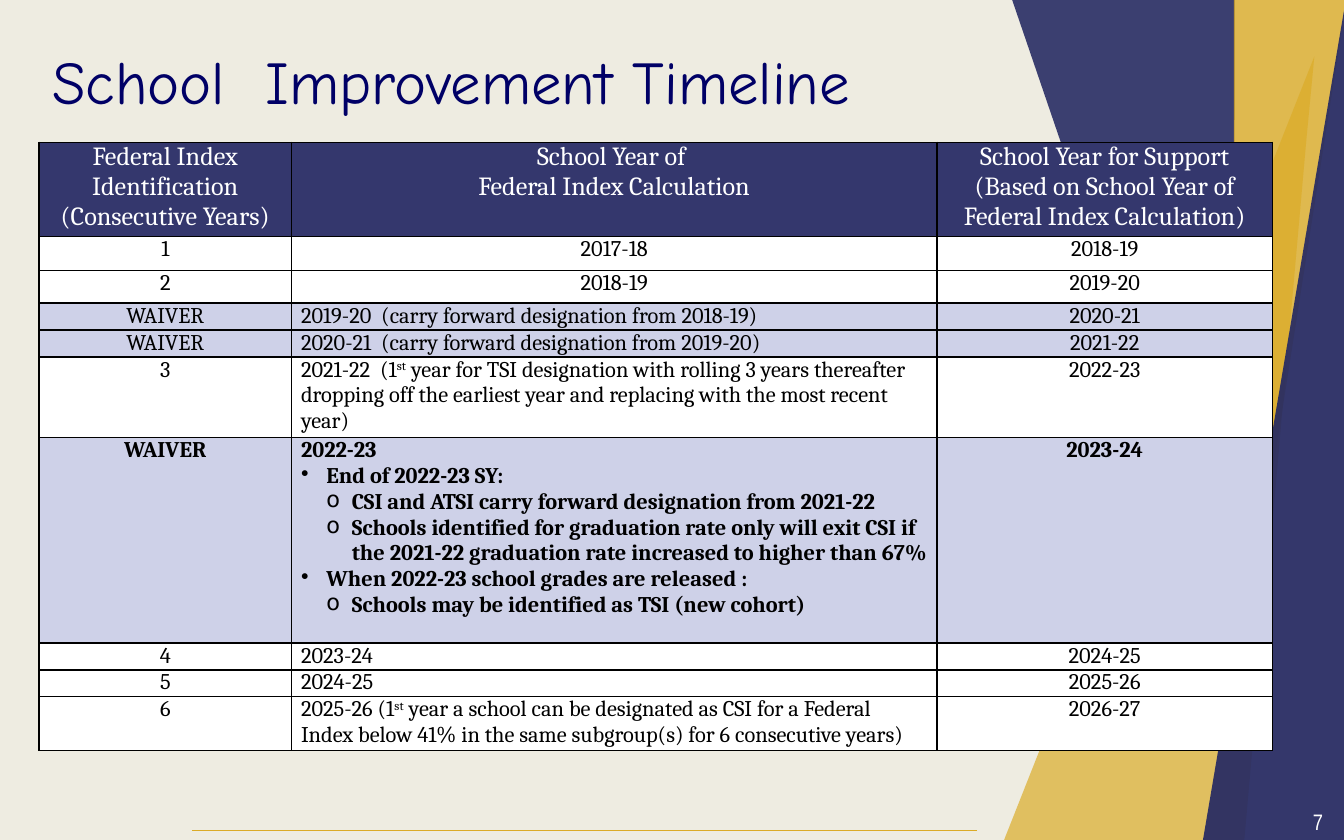
from lxml import etree
from pptx import Presentation
from pptx import util as u
from pptx.dml.color import RGBColor
from pptx.enum import shapes, text
from pptx.oxml import ns

COLORS = {
    "paper": "EEECE1", "navy": "262A63", "gold": "DBAB27", "header": "34376D",
    "waiver": "CED1E8", "white": "FFFFFF", "black": "000000", "title": "000066",
}
CENTER = text.PP_ALIGN.CENTER

# Corner points in centimetres, colour, opacity in percent
DECORATIONS = [
    ([(19.13, 0), (23.32, 12.27), (23.34, 0)], "navy", 89),
    ([(23.32, 0), (23.32, 13.61), (25.45, 0)], "gold", 78),
    ([(18.87, 16.15), (24.84, 1.07), (24.69, 2.64), (23.5, 16.08)], "gold", 69),
    ([(22.71, 16.03), (25.43, 0.03), (25.43, 16.03)], "navy", 93),
]

COLUMN_WIDTHS = [4.77, 12.2, 6.34]
HEADERS = [
    "Federal Index Identification (Consecutive Years)",
    ["School Year of ", "Federal Index Calculation"],
    "School Year for Support (Based on School Year of Federal Index Calculation)",
]
HEADER_HEIGHT = 1.71
# A paragraph is a string, a (level, string) bullet, or a list of runs;
# a run starting with ^ is superscript.
WAIVER_DETAILS = [
    "2022-23",
    (1, "End of 2022-23 SY:"),
    (2, "CSI and ATSI carry forward designation from 2021-22"),
    (2, "Schools identified for graduation rate only will exit CSI if the "
        "2021-22 graduation rate increased to higher than 67%"),
    (1, "When 2022-23 school grades are released :"),
    (2, "Schools may be identified as TSI (new cohort)"),
]
TIMELINE = [  # identification, calculation year, support year, row height
    ("1", "2017-18", "2018-19", 0.64),
    ("2", "2018-19", "2019-20", 0.62),
    ("WAIVER", "2019-20  (carry forward designation from 2018-19)", "2020-21", 0.48),
    ("WAIVER", "2020-21  (carry forward designation from 2019-20)", "2021-22", 0.48),
    ("3", [["2021-22  (1", "^st", " year for TSI designation with rolling 3 years "
            "thereafter dropping off the earliest year and replacing with the "
            "most recent year)"]], "2022-23", 1.46),
    ("WAIVER", WAIVER_DETAILS, "2023-24", 3.88),
    ("4", "2023-24", "2024-25", 0.48),
    ("5", "2024-25", "2025-26", 0.48),
    ("6", [["2025-26 (1", "^st", " year a school can be designated as CSI for a "
            "Federal Index below 41% in the same subgroup(s) for 6 consecutive "
            "years)"]], "2026-27", 0.97),
]


def rgb(color):
    return RGBColor.from_string(COLORS[color])


def add_xml(parent, tag, **attributes):
    child = etree.SubElement(parent, ns.qn(tag))
    for key, value in attributes.items():
        child.set(key, str(value))
    return child


def add_decoration(slide, points, color, opacity):
    corners = [(u.Cm(x), u.Cm(y)) for x, y in points]
    builder = slide.shapes.build_freeform(*corners[0])
    builder.add_line_segments(corners[1:], close=True)
    panel = builder.convert_to_shape()
    panel.shadow.inherit = False
    panel.line.fill.background()
    panel.fill.solid()
    panel.fill.fore_color.rgb = rgb(color)
    tint = panel.fill._xPr.find(".//" + ns.qn("a:srgbClr"))
    add_xml(tint, "a:alpha", val=opacity * 1000)


def add_footer_rule(slide):
    y = u.Cm(15.7)
    rule = slide.shapes.add_connector(
        shapes.MSO_CONNECTOR.STRAIGHT, u.Cm(3.63), y, u.Cm(18.47), y)
    rule.line.color.rgb = rgb("gold")
    rule.line.width = u.Pt(0.75)
    add_xml(rule._element.spPr, "a:effectLst")


def add_run(paragraph, words, font, size, color, bold=False):
    run = paragraph.add_run()
    run.text = words.removeprefix("^")
    run.font.name, run.font.size, run.font.bold = font, u.Pt(size), bold
    run.font.color.rgb = rgb(color)
    if words.startswith("^"):
        run.font._element.set("baseline", "30000")


def add_label(slide, box, words, font, size, color, inset):
    label = slide.shapes.add_textbox(*(u.Cm(side) for side in box))
    frame = label.text_frame
    frame.word_wrap = True
    frame.vertical_anchor = text.MSO_ANCHOR.MIDDLE
    frame.margin_top = frame.margin_bottom = u.Cm(inset)
    paragraph = frame.paragraphs[0]
    add_run(paragraph, words, font, size, color)
    return paragraph


def set_bullet(paragraph, level):
    properties = paragraph._p.get_or_add_pPr()
    properties.set("marL", str(u.Cm(0.48 * level)))
    properties.set("indent", str(u.Cm(-0.48)))
    tint = add_xml(properties, "a:buClr")
    add_xml(tint, "a:srgbClr", val=COLORS["black"])
    add_xml(properties, "a:buChar", char="•" if level == 1 else "o")


def set_borders(cell):
    properties = cell._tc.get_or_add_tcPr()
    for side in ("a:lnL", "a:lnR", "a:lnT", "a:lnB"):
        border = add_xml(properties, side, w=u.Pt(1))
        add_xml(add_xml(border, "a:solidFill"), "a:srgbClr", val=COLORS["black"])


def fill_cell(cell, content, fill, size=12, color="black", bold=False, align=None):
    set_borders(cell)
    cell.fill.solid()
    cell.fill.fore_color.rgb = rgb(fill)
    cell.margin_left = cell.margin_right = u.Cm(0.18)
    cell.margin_top = cell.margin_bottom = 0
    frame = cell.text_frame
    paragraphs = [content] if isinstance(content, str) else content
    for index, item in enumerate(paragraphs):
        paragraph = frame.add_paragraph() if index else frame.paragraphs[0]
        paragraph.alignment = align
        if isinstance(item, tuple):
            level, item = item
            set_bullet(paragraph, level)
        for words in [item] if isinstance(item, str) else item:
            add_run(paragraph, words, "Cambria", size, color, bold)


def add_timeline(slide):
    heights = [HEADER_HEIGHT] + [row[-1] for row in TIMELINE]
    frame = slide.shapes.add_table(
        len(heights), len(COLUMN_WIDTHS), u.Cm(0.74), u.Cm(2.69),
        u.Cm(sum(COLUMN_WIDTHS)), u.Cm(sum(heights)))
    table = frame.table
    table.first_row = table.horz_banding = False
    for column, width in zip(table.columns, COLUMN_WIDTHS):
        column.width = u.Cm(width)
    for row, height in zip(table.rows, heights):
        row.height = u.Cm(height)

    for column, heading in enumerate(HEADERS):
        fill_cell(table.cell(0, column), heading, "header", 14, "white", align=CENTER)
    for row, (status, calculation, support, _) in enumerate(TIMELINE, 1):
        fill = "waiver" if status == "WAIVER" else "white"
        bold = calculation is WAIVER_DETAILS
        calculation_align = CENTER if status in ("1", "2") else None
        aligns = (CENTER, calculation_align, CENTER)
        for column, content in enumerate((status, calculation, support)):
            fill_cell(table.cell(row, column), content, fill, bold=bold,
                      align=aligns[column])


def main():
    deck = Presentation()
    deck.slide_width, deck.slide_height = u.Cm(25.4), u.Cm(15.88)
    slide = deck.slides.add_slide(deck.slide_layouts[6])
    slide.background.fill.solid()
    slide.background.fill.fore_color.rgb = rgb("paper")

    for points, color, opacity in DECORATIONS:
        add_decoration(slide, points, color, opacity)
    add_footer_rule(slide)
    page = add_label(slide, (24.2, 15.11, 1.42, 0.86), "7",
                     "Arial Narrow", 12, "white", 0.13)
    page.alignment = CENTER
    add_timeline(slide)
    title = add_label(slide, (0.74, 0.76, 16.03, 1.93), "School  Improvement Timeline",
                      "Comic Neue", 32.5, "title", 0.25)
    title.line_spacing = 0.6
    deck.save("out.pptx")


if __name__ == "__main__":
    main()
